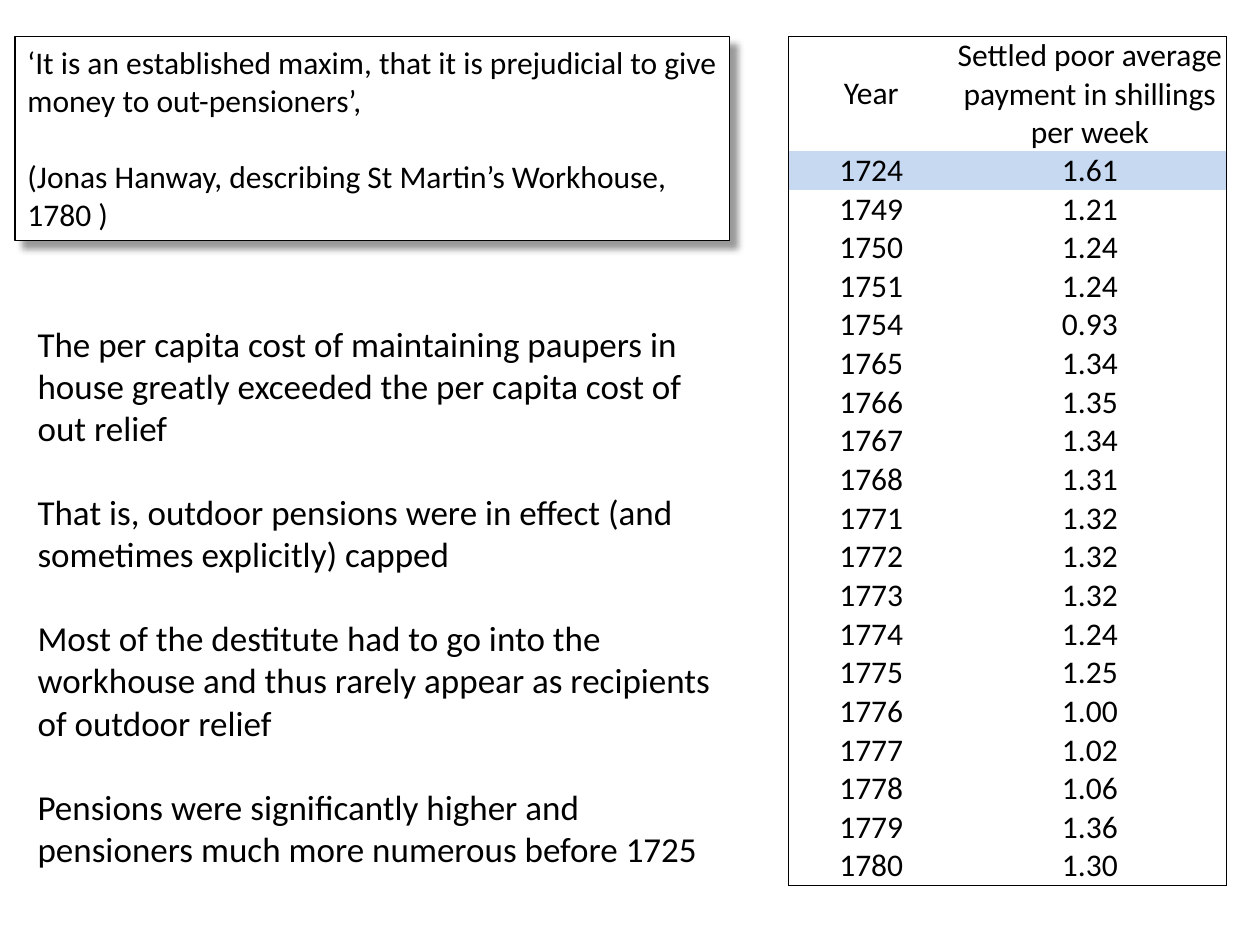
from lxml import etree
from pptx import Presentation
from pptx.dml.color import RGBColor
from pptx.enum.shapes import MSO_SHAPE
from pptx.enum.text import MSO_ANCHOR, PP_ALIGN
from pptx.oxml import parse_xml
from pptx.oxml.ns import nsdecls, qn
from pptx.util import Inches, Pt

RECT = MSO_SHAPE.RECTANGLE
LEFT, CENTER = PP_ALIGN.LEFT, PP_ALIGN.CENTER
MIDDLE, BOTTOM = MSO_ANCHOR.MIDDLE, MSO_ANCHOR.BOTTOM
BLACK = RGBColor(0x00, 0x00, 0x00)
WHITE = RGBColor(0xFF, 0xFF, 0xFF)
BLUE = RGBColor(0xC6, 0xD9, 0xF1)

QUOTE = [
    "‘It is an established maxim, that it is prejudicial to give money to out-pensioners’,",
    "(Jonas Hanway, describing St Martin’s Workhouse, 1780 )",
]
POINTS = [
    "The per capita cost of maintaining paupers in house greatly exceeded the per capita cost of out relief",
    "That is, outdoor pensions were in effect (and sometimes explicitly) capped",
    "Most of the destitute had to go into the workhouse and thus rarely appear as recipients of outdoor relief",
    "Pensions were significantly higher and pensioners much more numerous before 1725",
]
ROWS = [
    ("Year", "Settled poor average payment in shillings per week"),
    ("1724", "1.61"), ("1749", "1.21"), ("1750", "1.24"), ("1751", "1.24"),
    ("1754", "0.93"), ("1765", "1.34"), ("1766", "1.35"), ("1767", "1.34"),
    ("1768", "1.31"), ("1771", "1.32"), ("1772", "1.32"), ("1773", "1.32"),
    ("1774", "1.24"), ("1775", "1.25"), ("1776", "1.00"), ("1777", "1.02"),
    ("1778", "1.06"), ("1779", "1.36"), ("1780", "1.30"),
]


def write(frame, lines, size=18, align=LEFT, gap=0):
    """Put each line in its own paragraph, with gap points between them."""
    frame.word_wrap = True
    for i, line in enumerate(lines):
        para = frame.paragraphs[0] if i == 0 else frame.add_paragraph()
        para.alignment = align
        para.space_before = Pt(gap if i else 0)
        run = para.add_run()
        run.text = line
        run.font.size = Pt(size)
        run.font.name = "Calibri"
        run.font.color.rgb = BLACK


def edge(cell, sides):
    """Draw a thin black border on the given sides and none on the others."""
    props = cell._tc.get_or_add_tcPr()
    for i, side in enumerate("LRTB"):
        line = etree.Element(qn(f"a:ln{side}"))
        if side in sides:
            line.set("w", str(Pt(0.5)))
            fill = etree.SubElement(line, qn("a:solidFill"))
            etree.SubElement(fill, qn("a:srgbClr")).set("val", str(BLACK))
        else:
            etree.SubElement(line, qn("a:noFill"))
        props.insert(i, line)


deck = Presentation()
deck.slide_width, deck.slide_height = Inches(10), Inches(7.5)
slide = deck.slides.add_slide(deck.slide_layouts[6])
shapes = slide.shapes

# Main points
points = shapes.add_textbox(Inches(0.2), Inches(2.33), Inches(5.67), Inches(4.8))
points.text_frame.vertical_anchor = MIDDLE
write(points.text_frame, POINTS, size=20, gap=24)

# Payments by year
high, head = Inches(6.74), Inches(0.91)
last = len(ROWS) - 1
frame = shapes.add_table(len(ROWS), 2, Inches(6.26), Inches(0.29), Inches(3.47), high)
table = frame.table
table.first_row = table.horz_banding = False
table.columns[0].width, table.columns[1].width = Inches(1.31), Inches(2.16)
for r, row in enumerate(ROWS):
    table.rows[r].height = head if r == 0 else (high - head) // last
    for c, text in enumerate(row):
        cell = table.cell(r, c)
        cell.margin_left = cell.margin_right = 0
        cell.margin_top = cell.margin_bottom = 0
        cell.vertical_anchor = BOTTOM if r else MIDDLE
        write(cell.text_frame, [text], align=CENTER)
        if r == 1:
            cell.fill.solid()
            cell.fill.fore_color.rgb = BLUE
        else:
            cell.fill.background()
        edge(cell, "LR"[c] + ("T" if r == 0 else "B" if r == last else ""))

# Quotation with its shadow
quote = shapes.add_shape(RECT, Inches(0.12), Inches(0.29), Inches(5.67), Inches(1.62))
quote.fill.solid()
quote.fill.fore_color.rgb = WHITE
quote.line.color.rgb = BLACK
quote.line.width = Pt(0.75)
quote.shadow.inherit = False
effects = quote._element.spPr.find(qn("a:effectLst"))
effects.append(parse_xml(
    f'<a:outerShdw {nsdecls("a")} blurRad="{Pt(4)}" dist="{Pt(6)}" dir="2700000"'
    ' algn="tl" rotWithShape="0"><a:srgbClr val="000000"><a:alpha val="40000"/>'
    "</a:srgbClr></a:outerShdw>"))
quote.text_frame.vertical_anchor = MSO_ANCHOR.TOP
write(quote.text_frame, QUOTE, gap=22)

deck.save("out.pptx")
